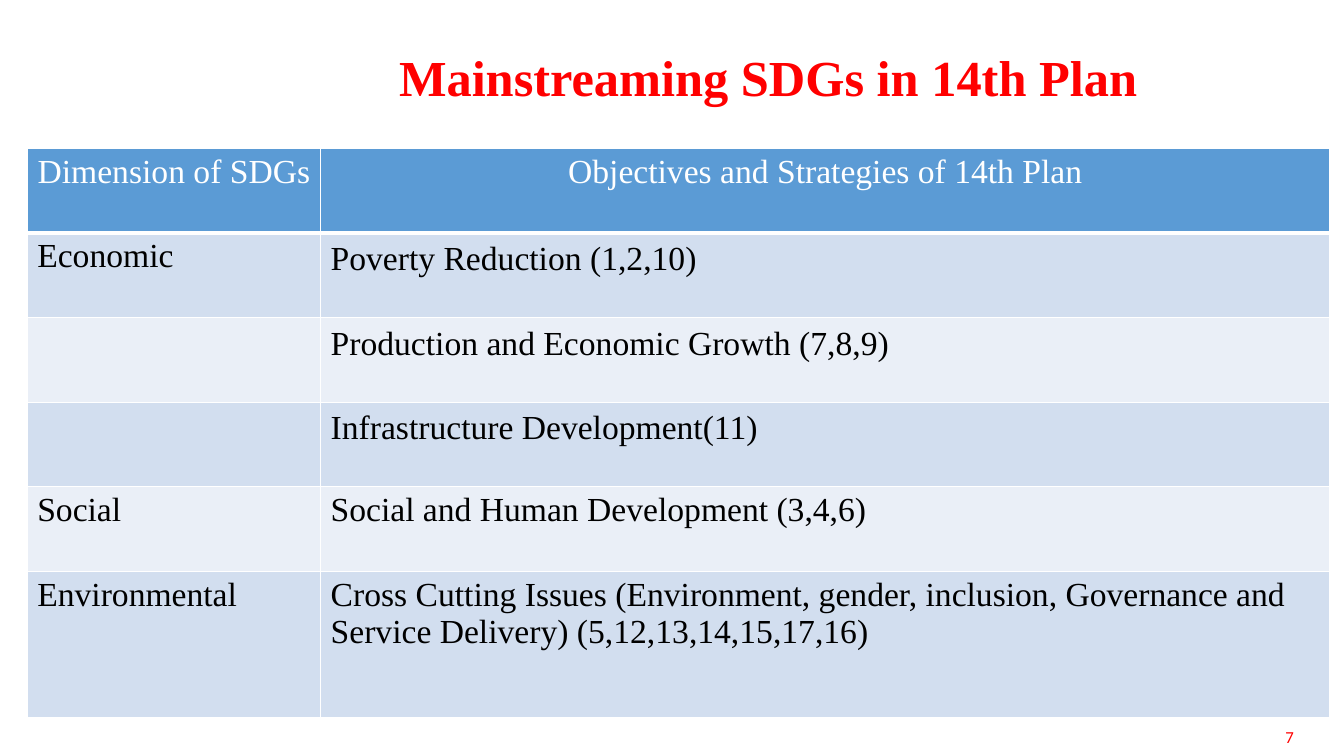
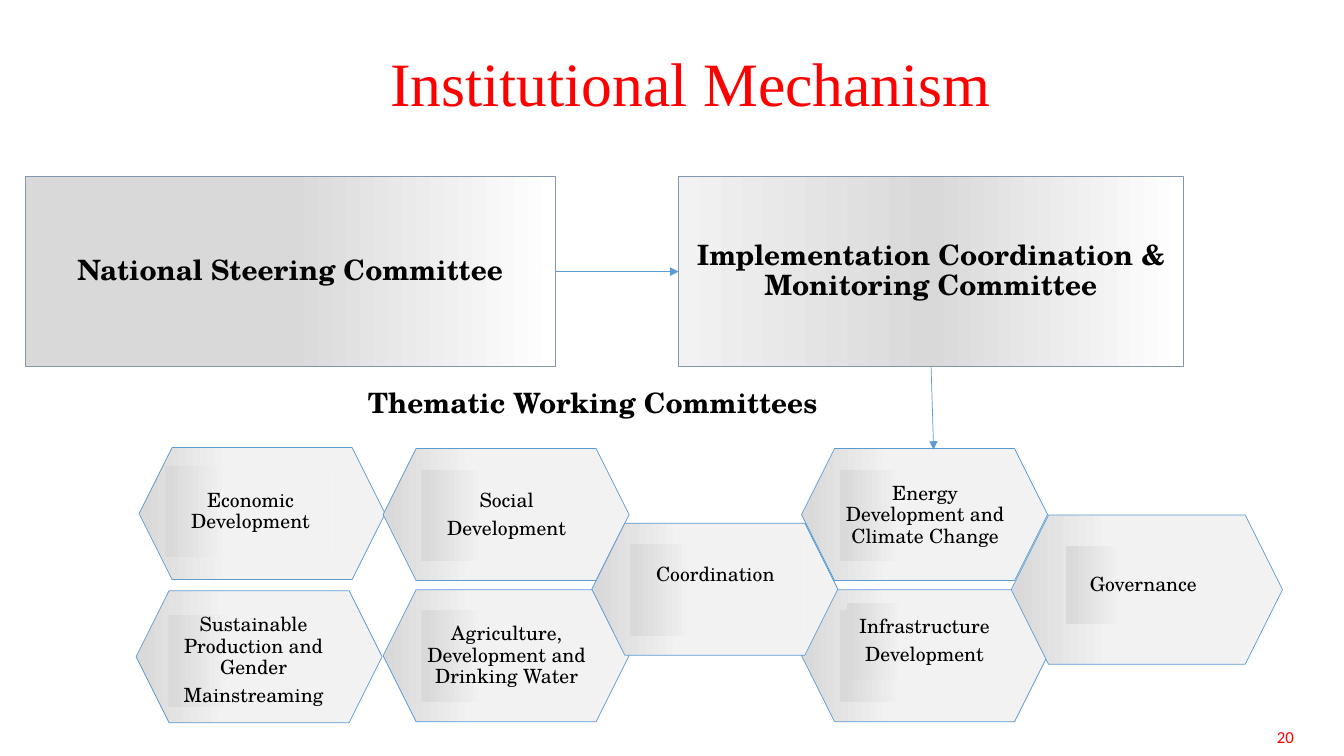
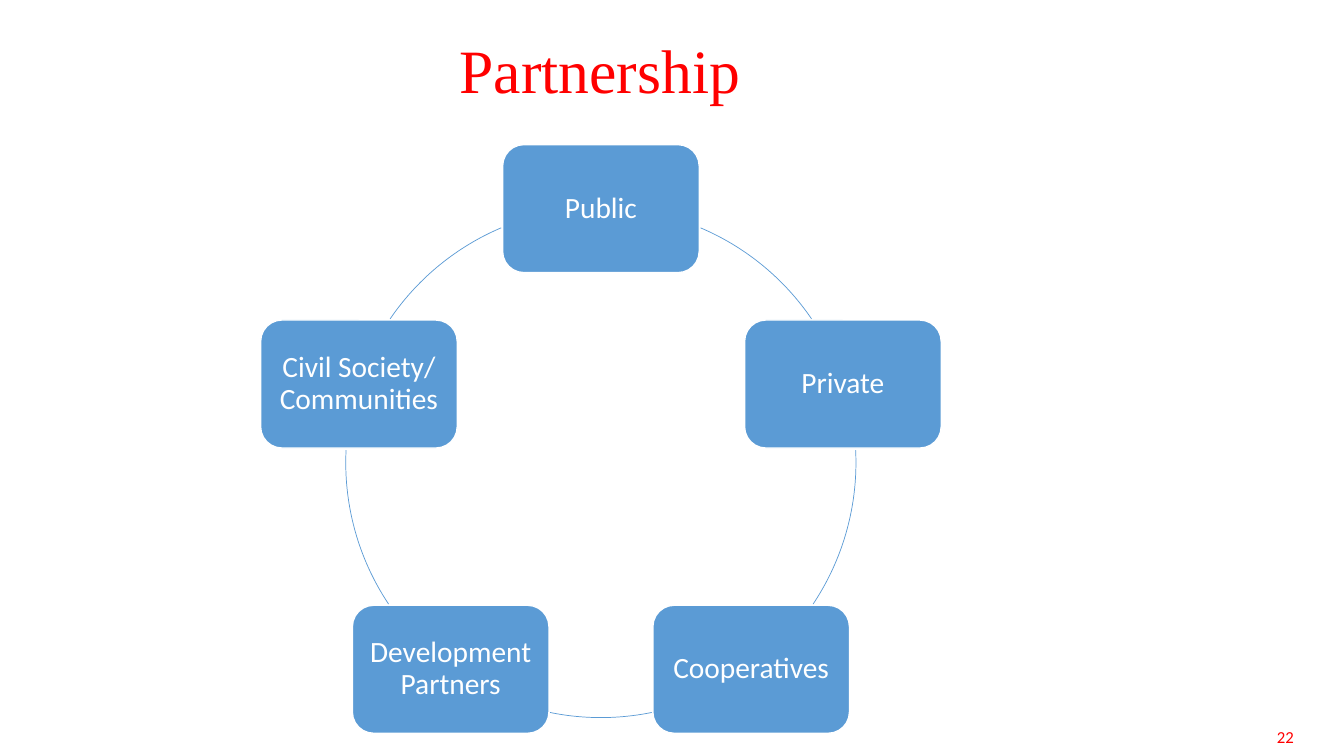
from dataclasses import dataclass
from itertools import product

from lxml import etree
from pptx import Presentation
from pptx.dml.color import RGBColor
from pptx.enum import shapes, text
from pptx.oxml.ns import qn
from pptx.util import Inches, Pt


@dataclass(frozen=True)
class Theme:
    red: str = "FF0000"
    blue: str = "5B9BD5"
    slate: str = "8497B0"
    white: str = "FFFFFF"
    black: str = "000000"
    bands: tuple = ("EAEFF7", "D2DEEF")
    hex_grad: tuple = ((2, "D9D9D9"), (36, "F2F2F2"))
    steering_grad: tuple = ((0, "D9D9D9"), (50, "D9D9D9"), (100, "FFFFFF"))
    monitoring_grad: tuple = ((0, "F2F2F2"), (50, "D9D9D9"), (100, "FFFFFF"))
    serif: str = "Times New Roman"
    sans: str = "Calibri"
    school: str = "TeX Gyre Schola"
    title: int = 44
    title_small: int = 36
    table: int = 24
    node: int = 21
    committee: int = 20
    label: int = 14
    number: int = 12


T = Theme()
SHAPE = shapes.MSO_SHAPE
ALIGN = text.PP_ALIGN
MIDDLE = text.MSO_ANCHOR.MIDDLE

# Table of plan objectives
COLUMNS = (2.91, 10.01)
ROWS = (0.84,) * 5 + (1.45,)
OBJECTIVES = [
    ("Dimension of SDGs", "Objectives and Strategies of 14th Plan"),
    ("Economic", "Poverty Reduction (1,2,10)"),
    ("", "Production and Economic Growth (7,8,9)"),
    ("", "Infrastructure Development(11)"),
    ("Social", "Social and Human Development (3,4,6)"),
    ("Environmental", "Cross Cutting Issues (Environment, gender, inclusion, "
     "Governance and Service Delivery) (5,12,13,14,15,17,16)"),
]
SPACED_ROWS = (1, 2, 3)

# Committees: paragraphs, hexagon box, label box, bottom inset of the label
HEX, LABEL, SMALL_LABEL = (2.44, 1.31), (1.69, 0.91), (1.54, 0.77)
THEMES = [
    (["Economic Development"], (1.38, 4.44, *HEX), (1.64, 4.62, *LABEL), 0.04),
    (["Infrastructure", "Development"], (7.95, 5.85, *HEX), (8.4, 5.98, *SMALL_LABEL), 0.04),
    (["Social", "Development"], (3.8, 4.45, *HEX), (4.18, 4.66, *LABEL), 0.04),
    (["Sustainable Production and Gender", "Mainstreaming"],
     (1.35, 5.86, *HEX), (1.67, 6.1, *LABEL), 0.04),
    (["Agriculture, Development and Drinking Water"],
     (3.8, 5.85, *HEX), (4.18, 6.05, *LABEL), 0.04),
    (["Governance"], (10.03, 5.11, 2.69, 1.48), (10.57, 5.42, *SMALL_LABEL), 0.04),
    (["Coordination"], (5.87, 5.19, *HEX), (6.25, 5.4, *LABEL), 0.34),
    (["Energy Development and Climate Change"],
     (7.95, 4.45, *HEX), (8.33, 4.66, *LABEL), 0.04),
]
INFRASTRUCTURE_PANEL = (8.33, 6.05, *LABEL)
COMMITTEES = [
    ("National Steering Committee", (0.25, 1.75, 5.26, 1.89), T.steering_grad),
    ("Implementation Coordination & Monitoring Committee",
     (6.73, 1.75, 5.01, 1.89), T.monitoring_grad),
]

# Ring of partners, clockwise from the top, and arcs in degrees from the right
PARTNERS = ["Public", "Private", "Cooperatives", "Development Partners",
            "Civil Society/ Communities"]
RING_NODES = ((0, -2.52), (2.4, -0.78), (1.49, 2.05), (-1.49, 2.05), (-2.4, -0.78))
RING_ARCS = ((293, 325.7), (357.2, 33.7), (78.5, 101.5), (146.3, 182.8), (214.3, 247))
RING_CENTRE, RING_RADIUS, NODE = (5.96, 4.59), 2.53, (1.95, 1.27)


def rgb(value):
    return RGBColor.from_string(value)


def inches(values):
    return [Inches(v) for v in values]


def set_all(target, values):
    for name, value in values.items():
        setattr(target, name, value)


def write(tf, paragraphs, font, size, color, bold=False, inset=None, anchor=None, **par):
    """Fill a text frame; par holds paragraph attributes."""
    tf.word_wrap = True
    if anchor is not None:
        tf.vertical_anchor = anchor
    if inset:
        sides = ("left", "top", "right", "bottom")
        set_all(tf, {f"margin_{side}": Inches(v) for side, v in zip(sides, inset)})
    for i, line in enumerate(paragraphs):
        p = tf.paragraphs[0] if i == 0 else tf.add_paragraph()
        set_all(p, par)
        r = p.add_run()
        r.text = line
        set_all(r.font, {"name": font, "size": Pt(size), "bold": bold})
        r.font.color.rgb = rgb(color)


def write_centred(sp, paragraphs, font, size, color, inset, bold=False):
    write(sp.text_frame, paragraphs, font, size, color, bold, inset, MIDDLE,
          alignment=ALIGN.CENTER, line_spacing=0.9, space_after=Pt(round(0.35 * size, 1)))


def add_text(s, box, paragraphs, font, size, color, **options):
    tf = s.shapes.add_textbox(*inches(box)).text_frame
    write(tf, paragraphs, font, size, color, **options)


def add_box(s, kind, box, fill=None, line=None, width=0.5):
    """Add a shape; fill is a colour, a tuple of gradient stops, or None."""
    sp = s.shapes.add_shape(kind, *inches(box))
    sp.shadow.inherit = False
    if fill is None:
        sp.fill.background()
    elif isinstance(fill, str):
        sp.fill.solid()
        sp.fill.fore_color.rgb = rgb(fill)
    else:
        sp.fill.gradient()
        sp.fill.gradient_angle = 0
        stops = sp._element.spPr.find(".//" + qn("a:gsLst"))
        stops.clear()
        for percent, color in fill:
            gs = etree.SubElement(stops, qn("a:gs"), pos=str(percent * 1000))
            etree.SubElement(gs, qn("a:srgbClr"), val=color)
    if line:
        sp.line.color.rgb = rgb(line)
        sp.line.width = Pt(width)
    else:
        sp.line.fill.background()
    return sp


def add_arrow(s, start, end):
    c = s.shapes.add_connector(shapes.MSO_CONNECTOR.STRAIGHT, *inches(start + end))
    c.line.color.rgb = rgb(T.blue)
    c.line.width = Pt(0.5)
    etree.SubElement(c.line._get_or_add_ln(), qn("a:tailEnd"), type="triangle")
    etree.SubElement(c._element.spPr, qn("a:effectLst"))
    return c


def add_borders(cell, header):
    tc_pr = cell._tc.get_or_add_tcPr()
    for side in "LRTB":
        width = 3 if header and side == "B" else 1
        ln = etree.SubElement(tc_pr, qn(f"a:ln{side}"), w=str(Pt(width)))
        fill = etree.SubElement(ln, qn("a:solidFill"))
        etree.SubElement(fill, qn("a:srgbClr"), val=T.white)


def add_slide(prs, title, left, top, number, size=T.title, bold=False):
    s = prs.slides.add_slide(prs.slide_layouts[6])
    add_text(s, (10.29, 7.16, 2.64, 0.3), [number], T.sans, T.number, T.red,
             alignment=ALIGN.RIGHT)
    add_text(s, (left, top, 11.12, 0.95), [title], T.serif, size, T.red, bold=bold,
             anchor=MIDDLE, alignment=ALIGN.CENTER, line_spacing=0.9)
    return s


def build_objectives(prs):
    s = add_slide(prs, "Mainstreaming SDGs in 14th Plan", 2.06, 0.32, "7",
                  T.title_small, bold=True)
    box = (0.27, 1.47, sum(COLUMNS), sum(ROWS))
    table = s.shapes.add_table(len(ROWS), len(COLUMNS), *inches(box)).table
    for column, width in zip(table.columns, COLUMNS):
        column.width = Inches(width)
    for row, height in zip(table.rows, ROWS):
        row.height = Inches(height)
    for i, j in product(range(len(ROWS)), range(len(COLUMNS))):
        cell, header = table.cell(i, j), i == 0
        add_borders(cell, header)
        cell.fill.solid()
        cell.fill.fore_color.rgb = rgb(T.blue if header else T.bands[i % 2])
        par = {"alignment": ALIGN.CENTER if header else ALIGN.LEFT}
        if j == 1 and i in SPACED_ROWS:
            par.update(line_spacing=1.07, space_after=Pt(8))
        if OBJECTIVES[i][j]:
            write(cell.text_frame, [OBJECTIVES[i][j]], T.serif, T.table,
                  T.white if header else T.black, **par)


def build_mechanism(prs):
    s = add_slide(prs, "Institutional Mechanism ", 1.37, 0.38, "20")
    for paragraphs, hexagon, label, bottom in THEMES:
        add_box(s, SHAPE.HEXAGON, hexagon, T.hex_grad, T.blue)
        if paragraphs[0] == "Infrastructure":
            add_box(s, SHAPE.RECTANGLE, INFRASTRUCTURE_PANEL, T.hex_grad)
        sp = add_box(s, SHAPE.RECTANGLE, label, T.hex_grad)
        write_centred(sp, paragraphs, T.school, T.label, T.black, (0, 0.04, 0, bottom))
    committees = []
    for name, box, grad in COMMITTEES:
        sp = add_box(s, SHAPE.RECTANGLE, box, grad, T.slate, 0.75)
        write_centred(sp, [name], T.school, T.committee, T.black, (0.07,) * 4, bold=True)
        committees.append(sp)
    add_text(s, (3.55, 3.78, 5.75, 0.58), ["Thematic Working Committees"],
             T.school, T.committee, T.black, bold=True)
    steering, monitoring = committees
    across = add_arrow(s, (5.51, 2.69), (6.73, 2.69))
    across.begin_connect(steering, 3)
    across.end_connect(monitoring, 1)
    down = add_arrow(s, (9.23, 3.64), (9.26, 4.46))
    down.begin_connect(monitoring, 2)


def build_partnership(prs):
    s = add_slide(prs, "Partnership", 0.39, 0.25, "22")
    cx, cy = RING_CENTRE
    ring = (cx - RING_RADIUS, cy - RING_RADIUS, 2 * RING_RADIUS, 2 * RING_RADIUS)
    for name, (dx, dy), arc in zip(PARTNERS, RING_NODES, RING_ARCS):
        box = (cx + dx - NODE[0] / 2, cy + dy - NODE[1] / 2, *NODE)
        sp = add_box(s, SHAPE.ROUNDED_RECTANGLE, box, T.blue, T.white, 1)
        write_centred(sp, [name], T.sans, T.node, T.white, (0.09,) * 4)
        curve = add_box(s, SHAPE.ARC, ring, line=T.blue)
        for i, degrees in enumerate(arc):
            curve.adjustments[i] = degrees * 0.6  # 60000 units a degree, over 100000


def main():
    prs = Presentation()
    prs.slide_width, prs.slide_height = inches((13.33, 7.5))
    for build in (build_objectives, build_mechanism, build_partnership):
        build(prs)
    prs.save("out.pptx")


if __name__ == "__main__":
    main()
